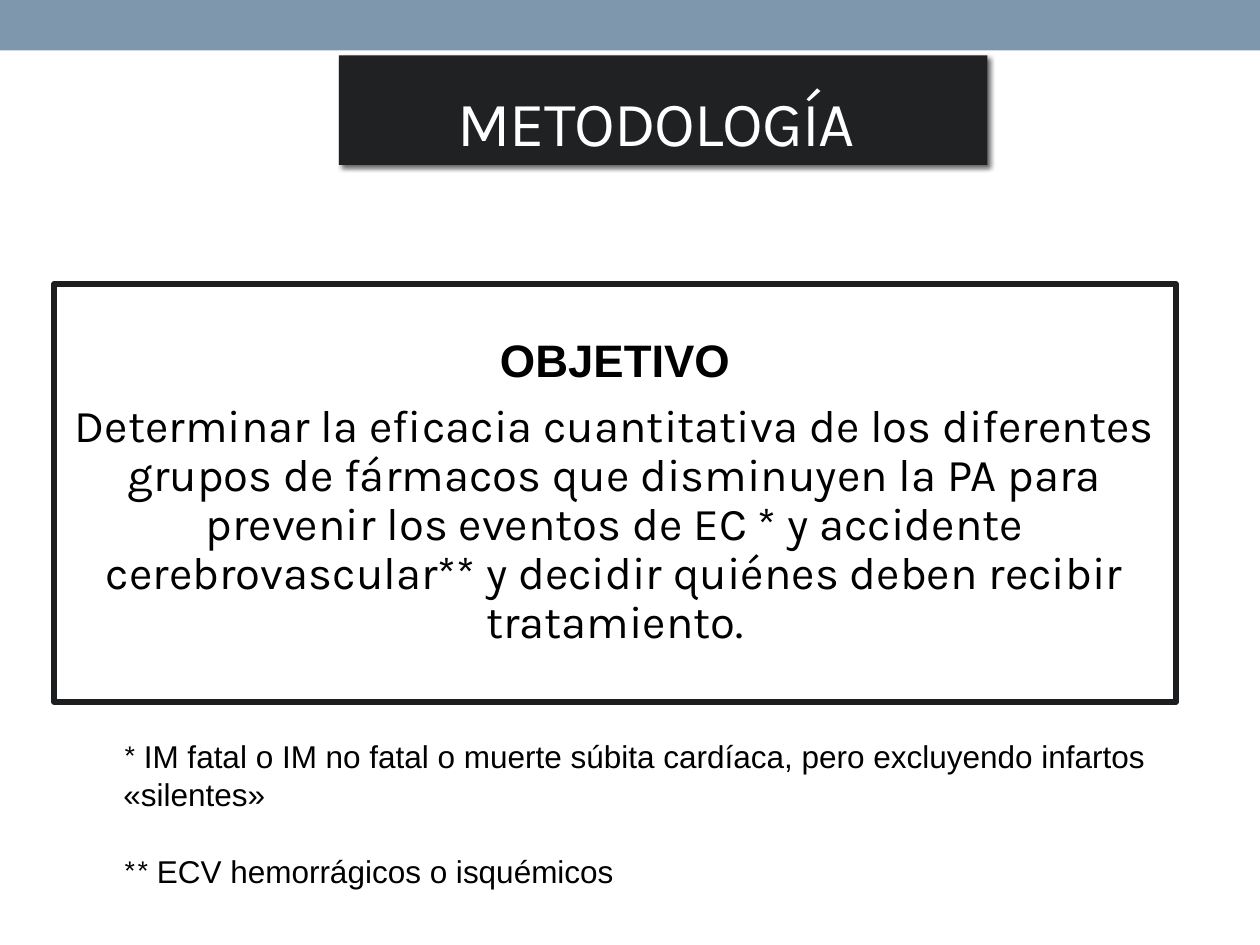
from lxml.etree import SubElement
from pptx import Presentation
from pptx.dml.color import RGBColor
from pptx.enum.shapes import MSO_SHAPE
from pptx.enum.text import MSO_ANCHOR, PP_ALIGN
from pptx.oxml.ns import qn
from pptx.util import Pt

BLUE = RGBColor(0x7E, 0x97, 0xAD)
DARK = RGBColor(0x1F, 0x21, 0x23)
EDGE = RGBColor(0x1C, 0x1E, 0x20)
WHITE = RGBColor(0xFF, 0xFF, 0xFF)
BLACK = RGBColor(0, 0, 0)


def add_rect(slide, box, fill, line=None, width=0):
    rect = slide.shapes.add_shape(MSO_SHAPE.RECTANGLE, *map(Pt, box))
    rect.shadow.inherit = False
    rect.fill.solid()
    rect.fill.fore_color.rgb = fill
    if line is None:
        rect.line.fill.background()
    else:
        rect.line.color.rgb = line
        rect.line.width = Pt(width)
    return rect


def add_shade(shape, blur, dist, angle, alpha):
    effects = shape._element.spPr.find(qn("a:effectLst"))
    shade = SubElement(effects, qn("a:outerShdw"), blurRad=str(Pt(blur)),
                       dist=str(Pt(dist)), dir=str(angle * 60000),
                       algn="tl", rotWithShape="0")
    color = SubElement(shade, qn("a:srgbClr"), val=str(BLACK))
    SubElement(color, qn("a:alpha"), val=str(alpha * 1000))


def add_text(shape, paras, size, color=BLACK, align=PP_ALIGN.LEFT,
             anchor=MSO_ANCHOR.TOP, inset=None, lines=None, after=0,
             spacing=None):
    """Each paragraph is a list of (text, font, bold) runs."""
    frame = shape.text_frame
    frame.word_wrap = True
    frame.vertical_anchor = anchor
    if inset is not None:
        frame.margin_left = frame.margin_right = Pt(inset)
        frame.margin_top = frame.margin_bottom = Pt(inset)
    for i, runs in enumerate(paras):
        para = frame.add_paragraph() if i else frame.paragraphs[0]
        para.alignment = align
        para.space_after = Pt(after)
        if lines:
            para.line_spacing = lines
        for text, face, bold in runs:
            run = para.add_run()
            run.text = text
            run.font.name = face
            run.font.size = Pt(size)
            run.font.bold = bold
            run.font.color.rgb = color
            if spacing is not None:
                run._r.get_or_add_rPr().set("spc", str(round(spacing * 100)))


def add_title(slide, box):
    rect = add_rect(slide, box, DARK)
    add_shade(rect, blur=3, dist=2, angle=45, alpha=60)
    add_text(rect, [[("METODOLOGÍA ", "Karla", False)]], 36, color=WHITE,
             align=PP_ALIGN.CENTER, anchor=MSO_ANCHOR.BOTTOM, spacing=-0.6)


def add_goal(slide, box):
    rect = add_rect(slide, box, WHITE, EDGE, 3.5)
    goal = ("Determinar la eficacia cuantitativa de los diferentes grupos de "
            "fármacos que disminuyen la PA para prevenir los eventos de EC * "
            "y accidente cerebrovascular** y decidir quiénes deben recibir "
            "tratamiento.")
    add_text(rect, [[("OBJETIVO", "Arial", True)], [(goal, "Karla", False)]],
             26, align=PP_ALIGN.CENTER, anchor=MSO_ANCHOR.MIDDLE, inset=7.8,
             lines=0.9, after=9.1)


def add_note(slide, box, mark, text):
    note = slide.shapes.add_textbox(*map(Pt, box))
    add_text(note, [[(mark + " ", "Karla", False), (text, "Arial", False)]], 18)


def main():
    deck = Presentation()
    deck.slide_width, deck.slide_height = Pt(720), Pt(540)
    slide = deck.slides.add_slide(deck.slide_layouts[6])

    # Top band
    add_rect(slide, (0, 0, 720, 28.8), BLUE)
    # Objective panel
    add_goal(slide, (31, 162.5, 641, 238.5))
    # Title
    add_title(slide, (193.7, 31.7, 370.6, 62.6))
    # Footnotes
    add_note(slide, (63.4, 417.6, 612, 51), "*",
             "IM fatal o IM no fatal o muerte súbita cardíaca, pero "
             "excluyendo infartos «silentes»")
    add_note(slide, (63.4, 483.1, 612, 29), "**",
             "ECV hemorrágicos o isquémicos")
    deck.save("out.pptx")


if __name__ == "__main__":
    main()
